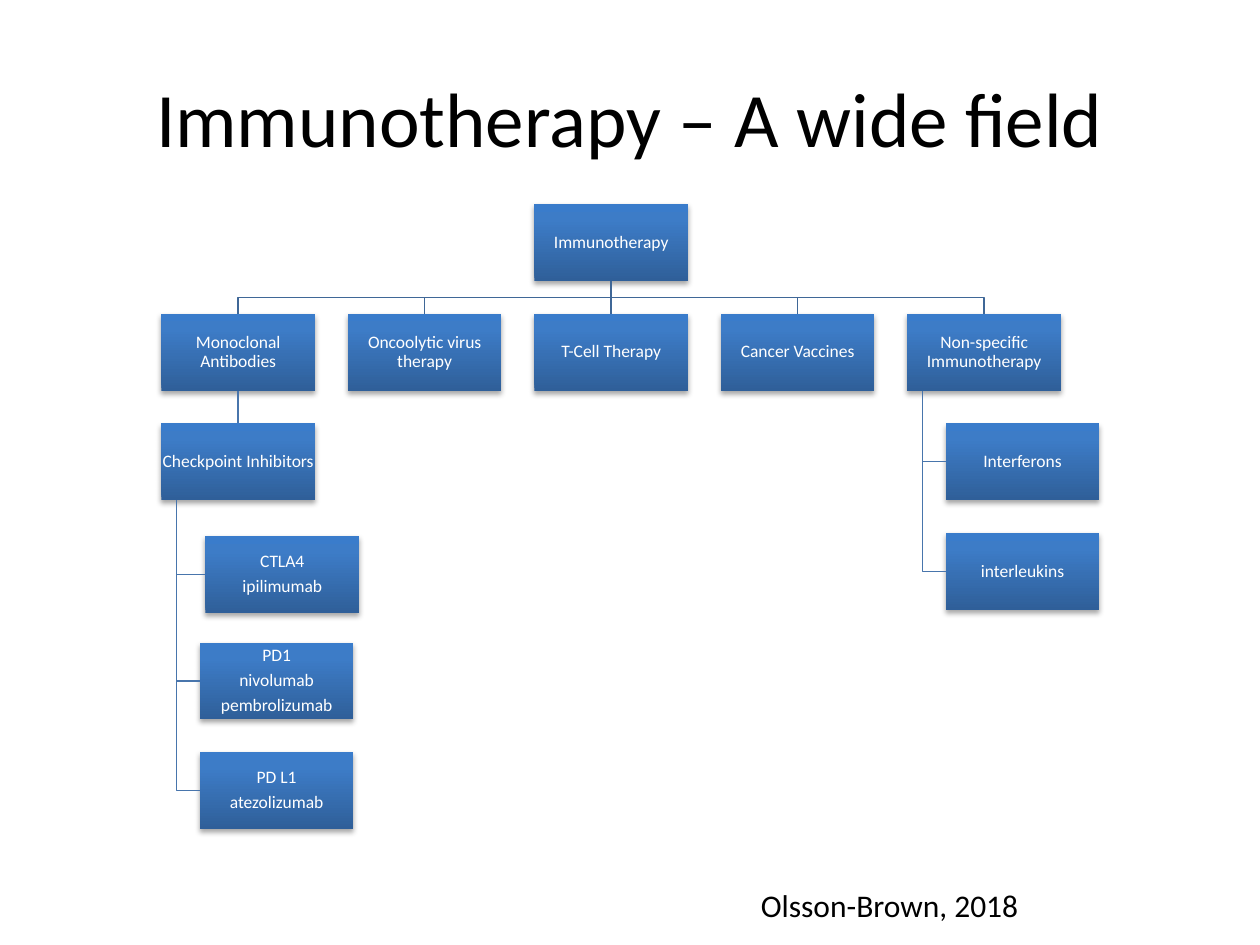
import copy
from dataclasses import dataclass

import lxml.etree
import pptx
import pptx.dml.color
import pptx.enum.shapes
import pptx.enum.text
import pptx.oxml
import pptx.oxml.ns
import pptx.util

Inches, Pt = pptx.util.Inches, pptx.util.Pt
RGB = pptx.dml.color.RGBColor.from_string
ALIGN, ANCHOR = pptx.enum.text.PP_ALIGN, pptx.enum.text.MSO_ANCHOR


@dataclass(frozen=True)
class Theme:
    font: str = "Calibri"
    ink: str = "000000"
    box_text: str = "FFFFFF"
    gradient: tuple = ((0, "2F5F99"), (0.8, "3D7CC7"), (1, "3A7CCB"))
    branch_line: str = "3F6797"
    sub_line: str = "4875AC"
    title_pt: int = 44
    source_pt: int = 18
    box_pt: int = 10
    line_pt: float = 0.75


THEME = Theme()

# Chart grid in inches: first cell, cell pitch and box size
LEFT, TOP = 1.28, 1.62
COL, ROW = 1.48, 0.87
BOX_W, BOX_H = 1.22, 0.61
INDENT = BOX_W / 4 / COL    # shift of a hanging box, in columns
STEM = BOX_W / 10           # distance of a hanging stem from the box edge

# name: (column, row, lines of text)
BOXES = {
    "root": (2, 0, ["Immunotherapy"]),
    "antibodies": (0, 1, ["Monoclonal Antibodies"]),
    "virus": (1, 1, ["Oncoolytic virus therapy"]),
    "t_cell": (2, 1, ["T-Cell Therapy"]),
    "vaccines": (3, 1, ["Cancer Vaccines"]),
    "non_specific": (4, 1, ["Non-specific Immunotherapy"]),
    "checkpoint": (0, 2, ["Checkpoint Inhibitors"]),
    "ctla4": (INDENT + 0.03, 3.03, ["CTLA4", "ipilimumab"]),
    "pd1": (INDENT, 4, ["PD1", "nivolumab", "pembrolizumab"]),
    "pd_l1": (INDENT, 5, ["PD L1", "atezolizumab"]),
    "interferons": (4 + INDENT, 2, ["Interferons"]),
    "interleukins": (4 + INDENT, 3, ["interleukins"]),
}
STRAIGHT = [("root", "t_cell", THEME.branch_line),
            ("antibodies", "checkpoint", THEME.sub_line)]
BRANCHES = {"root": ["antibodies", "virus", "vaccines", "non_specific"]}
HANGING = {"checkpoint": ["ctla4", "pd1", "pd_l1"],
           "non_specific": ["interferons", "interleukins"]}


def apply(obj, formats):
    for name, value in formats.items():
        setattr(obj, name, value)


def write(tf, lines, size, color, **paragraph):
    for i, line in enumerate(lines):
        p = tf.paragraphs[0] if i == 0 else tf.add_paragraph()
        apply(p, paragraph)
        r = p.add_run()
        r.text = line
        apply(r.font, {"name": THEME.font, "size": Pt(size)})
        r.font.color.rgb = RGB(color)


def fill_gradient(sp):
    sp.fill.gradient()
    sp.fill.gradient_angle = 90
    stops = sp._element.spPr.find(".//" + pptx.oxml.ns.qn("a:gsLst"))
    stops.append(copy.deepcopy(stops[-1]))
    for stop, (position, color) in zip(sp.fill.gradient_stops, THEME.gradient):
        stop.position = position
        stop.color.rgb = RGB(color)


def add_shadow(sp):
    sp.shadow.inherit = False
    effects = sp._element.spPr.find(pptx.oxml.ns.qn("a:effectLst"))
    effects.append(pptx.oxml.parse_xml(
        f'<a:outerShdw {pptx.oxml.ns.nsdecls("a")} blurRad="{Pt(3.1)}" '
        f'dist="{Pt(1.8)}" dir="5400000" rotWithShape="0">'
        '<a:srgbClr val="000000"><a:alpha val="35000"/></a:srgbClr></a:outerShdw>'))


def add_box(s, col, row, lines):
    sp = s.shapes.add_shape(
        pptx.enum.shapes.MSO_SHAPE.RECTANGLE, Inches(LEFT + col * COL),
        Inches(TOP + row * ROW), Inches(BOX_W), Inches(BOX_H))
    fill_gradient(sp)
    sp.line.fill.background()
    add_shadow(sp)
    inset = Inches(0.01)
    apply(sp.text_frame, {
        "word_wrap": True, "vertical_anchor": ANCHOR.MIDDLE,
        "margin_left": inset, "margin_right": inset,
        "margin_top": inset, "margin_bottom": inset})
    write(sp.text_frame, lines, THEME.box_pt, THEME.box_text,
          alignment=ALIGN.CENTER, line_spacing=0.9, space_after=Pt(3.5))
    return sp


def style_line(sp, color):
    sp.line.color.rgb = RGB(color)
    sp.line.width = Pt(THEME.line_pt)


def add_straight(s, parent, child, color):
    line = s.shapes.add_connector(
        pptx.enum.shapes.MSO_CONNECTOR.STRAIGHT, 0, 0, 0, 0)
    line.begin_connect(parent, 2)
    line.end_connect(child, 0)
    style_line(line, color)
    lxml.etree.SubElement(line._element.spPr, pptx.oxml.ns.qn("a:effectLst"))


def add_elbow(s, points, color):
    builder = s.shapes.build_freeform(*points[0])
    builder.add_line_segments(points[1:], close=False)
    sp = builder.convert_to_shape()
    sp.fill.background()
    sp.shadow.inherit = False
    style_line(sp, color)


def add_branch(s, parent, child):
    x1, y1 = parent.left + parent.width // 2, parent.top + parent.height
    x2, y2 = child.left + child.width // 2, child.top
    middle = (y1 + y2) // 2
    add_elbow(s, [(x1, y1), (x1, middle), (x2, middle), (x2, y2)],
              THEME.branch_line)


def add_hanging(s, parent, child):
    x = parent.left + Inches(STEM)
    y = child.top + child.height // 2
    add_elbow(s, [(x, parent.top + parent.height), (x, y), (child.left, y)],
              THEME.sub_line)


def add_title(s, text):
    title = s.shapes.title
    apply(title, {"left": Inches(0.5), "top": Inches(0.3),
                  "width": Inches(9), "height": Inches(1.25)})
    title.text_frame.vertical_anchor = ANCHOR.MIDDLE
    write(title.text_frame, [text], THEME.title_pt, THEME.ink,
          alignment=ALIGN.CENTER)


def add_source(s, text):
    sp = s.shapes.add_textbox(Inches(5.94), Inches(6.98), Inches(2.27), Inches(0.4))
    apply(sp.text_frame, {
        "word_wrap": False,
        "auto_size": pptx.enum.text.MSO_AUTO_SIZE.SHAPE_TO_FIT_TEXT})
    write(sp.text_frame, [text], THEME.source_pt, THEME.ink)


def main():
    prs = pptx.Presentation()
    apply(prs, {"slide_width": Inches(10), "slide_height": Inches(7.5)})
    s = prs.slides.add_slide(prs.slide_layouts.get_by_name("Title Only"))

    # Boxes of the tree
    boxes = {name: add_box(s, *cell) for name, cell in BOXES.items()}

    # Lines between them
    for parent, child, color in STRAIGHT:
        add_straight(s, boxes[parent], boxes[child], color)
    for add_line, links in ((add_branch, BRANCHES), (add_hanging, HANGING)):
        for parent, children in links.items():
            for child in children:
                add_line(s, boxes[parent], boxes[child])

    # Title and source
    add_title(s, "Immunotherapy – A wide field")
    add_source(s, "Olsson-Brown, 2018")
    prs.save("out.pptx")


if __name__ == "__main__":
    main()
